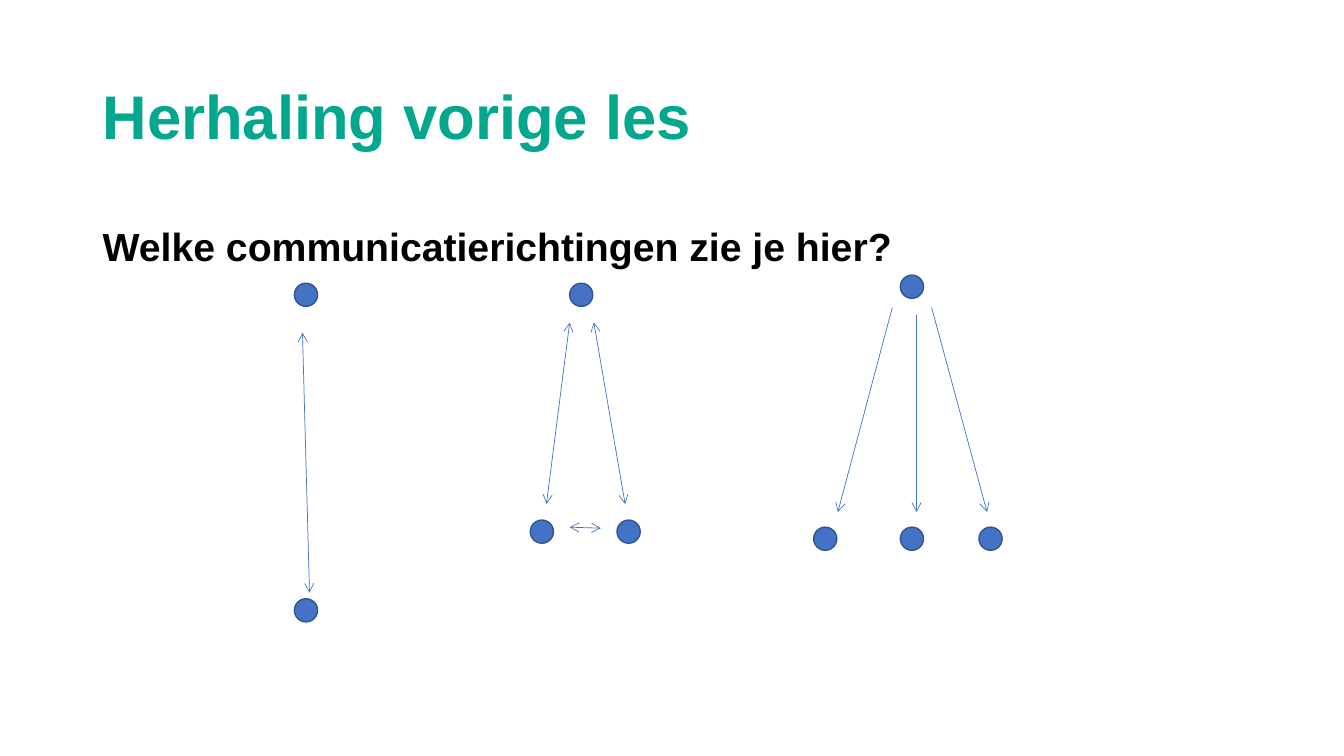
from lxml import etree
from pptx import Presentation
from pptx.dml.color import RGBColor
from pptx.enum.shapes import MSO_CONNECTOR, MSO_SHAPE
from pptx.enum.text import MSO_ANCHOR
from pptx.oxml.ns import qn
from pptx.util import Inches, Pt

STRAIGHT = MSO_CONNECTOR.STRAIGHT
OVAL = MSO_SHAPE.OVAL
TOP, MIDDLE = MSO_ANCHOR.TOP, MSO_ANCHOR.MIDDLE

COLORS = {"title": "03A78D", "text": "000000", "dot": "4472C4", "outline": "325491"}
FONT = "Arial"
DOT_SIZE = 0.23


class SlideBuilder:
    def __init__(self, slide):
        self.slide = slide

    def color(self, name):
        return RGBColor.from_string(COLORS[name])

    def text(self, left, top, width, height, wording, size, color, anchor):
        box = self.slide.shapes.add_textbox(
            Inches(left), Inches(top), Inches(width), Inches(height))
        frame = box.text_frame
        frame.word_wrap = True
        frame.vertical_anchor = anchor
        frame.text = wording
        paragraph = frame.paragraphs[0]
        paragraph.line_spacing = 0.9
        font = paragraph.runs[0].font
        font.name, font.size, font.bold = FONT, Pt(size), True
        font.color.rgb = self.color(color)

    def dot(self, left, top):
        shape = self.slide.shapes.add_shape(
            OVAL, Inches(left), Inches(top), Inches(DOT_SIZE), Inches(DOT_SIZE))
        shape.shadow.inherit = False
        shape.fill.solid()
        shape.fill.fore_color.rgb = self.color("dot")
        shape.line.color.rgb = self.color("outline")
        shape.line.width = Pt(1)

    def arrow(self, start, end, both_ways):
        points = [Inches(value) for value in (*start, *end)]
        connector = self.slide.shapes.add_connector(STRAIGHT, *points)
        connector.line.color.rgb = self.color("dot")
        connector.line.width = Pt(0.5)
        line = connector.line._get_or_add_ln()
        for tag in ("a:headEnd", "a:tailEnd") if both_ways else ("a:tailEnd",):
            etree.SubElement(line, qn(tag), type="arrow")
        etree.SubElement(connector._element.spPr, qn("a:effectLst"))


def main():
    presentation = Presentation()
    presentation.slide_width = Inches(13.33)
    presentation.slide_height = Inches(7.5)
    builder = SlideBuilder(presentation.slides.add_slide(presentation.slide_layouts[6]))

    # Title and question
    builder.text(0.92, 0.79, 11.5, 0.79, "Herhaling vorige les", 44, "title", MIDDLE)
    builder.text(0.92, 2.21, 11.5, 4.76, "Welke communicatierichtingen zie je hier?",
                 28, "text", TOP)

    # Diagrams: dots, arrows, whether the arrows go both ways
    pair = ([(2.92, 2.81), (2.92, 5.94)],
            [((3, 3.3), (3.07, 5.88))], True)
    triangle = ([(5.65, 2.81), (5.26, 5.16), (6.12, 5.16)],
                [((5.65, 3.2), (5.42, 5)),
                 ((5.89, 3.2), (6.2, 5)),
                 ((5.65, 5.23), (5.96, 5.24))], True)
    broadcast = ([(8.93, 2.73), (8.07, 5.23), (8.93, 5.23), (9.71, 5.23)],
                 [((8.85, 3.05), (8.31, 5.08)),
                  ((9.09, 3.13), (9.09, 5.08)),
                  ((9.24, 3.05), (9.79, 5.08))], False)
    for dots, arrows, both_ways in (pair, triangle, broadcast):
        for left, top in dots:
            builder.dot(left, top)
        for start, end in arrows:
            builder.arrow(start, end, both_ways)

    presentation.save("out.pptx")


if __name__ == "__main__":
    main()
